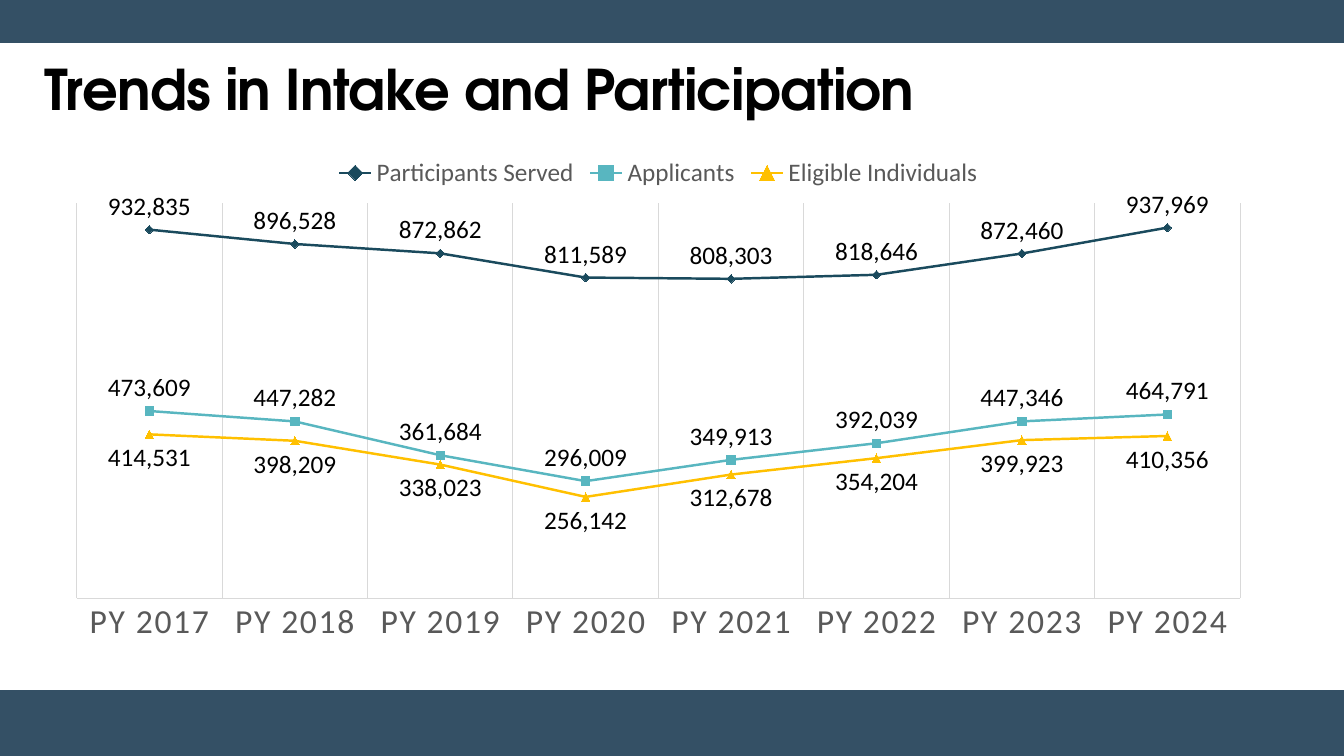
import pptx
import pptx.chart.data
import pptx.dml.color
import pptx.enum.chart
import pptx.enum.shapes
import pptx.enum.text
import pptx.oxml
import pptx.util

Inches = pptx.util.Inches
Pt = pptx.util.Pt
Enum = pptx.enum.chart
Place = Enum.XL_LABEL_POSITION
Mark = Enum.XL_MARKER_STYLE

BAR = "345065"
GRID = "D9D9D9"
GRAY = "595959"
BLACK = "000000"
YEARS = [f"PY {year}" for year in range(2017, 2025)]
TRENDS = [
    ("Participants Served", "1A4A5D", "276F8B", Mark.DIAMOND, Place.ABOVE,
     (932835, 896528, 872862, 811589, 808303, 818646, 872460, 937969)),
    ("Applicants", "58B6C0", "58B6C0", Mark.SQUARE, Place.ABOVE,
     (473609, 447282, 361684, 296009, 349913, 392039, 447346, 464791)),
    ("Eligible Individuals", "FFC000", "FFC000", Mark.TRIANGLE, Place.BELOW,
     (414531, 398209, 338023, 256142, 312678, 354204, 399923, 410356)),
]


def shade(color, code):
    color.rgb = pptx.dml.color.RGBColor.from_string(code)


def assign(item, **format):
    for key, value in format.items():
        setattr(item, key, value)


def style(font, size, code, name="Calibri", bold=False):
    assign(font, size=Pt(size), name=name, bold=bold)
    shade(font.color, code)


def fill(item, code):
    item.fill.solid()
    shade(item.fill.fore_color, code)


def stroke(line, code, width):
    shade(line.color, code)
    line.width = Pt(width)


def add_bar(slide, top, height):
    bar = slide.shapes.add_shape(
        pptx.enum.shapes.MSO_SHAPE.RECTANGLE,
        Inches(0), Inches(top), Inches(13.33), Inches(height))
    bar.shadow.inherit = False
    fill(bar, BAR)
    stroke(bar.line, BAR, 1)


def add_title(slide, text):
    title = slide.shapes.title
    assign(title, left=Inches(0.34), top=Inches(0),
           width=Inches(12.2), height=Inches(1.59))
    frame = title.text_frame
    assign(frame, word_wrap=True, margin_top=Inches(0.3),
           auto_size=pptx.enum.text.MSO_AUTO_SIZE.NONE,
           vertical_anchor=pptx.enum.text.MSO_ANCHOR.MIDDLE)
    line = frame.paragraphs[0]
    assign(line, alignment=pptx.enum.text.PP_ALIGN.LEFT, line_spacing=0.9)
    run = line.add_run()
    run.text = text
    style(run.font, 40, BLACK, "TeX Gyre Adventor", True)
    run._r.get_or_add_rPr().set("spc", "-50")


def set_plot(chart, **frame):
    area = chart._chartSpace.chart.plotArea
    for old in area.xpath("c:layout"):
        area.remove(old)
    parts = "".join(f'<c:{key} val="{value}"/>' for key, value in frame.items())
    area.insert(0, pptx.oxml.parse_xml(
        '<c:layout xmlns:c="http://schemas.openxmlformats.org/drawingml/2006/chart">'
        '<c:manualLayout><c:layoutTarget val="inner"/>'
        '<c:xMode val="edge"/><c:yMode val="edge"/>'
        f'{parts}</c:manualLayout></c:layout>'))


def set_axes(chart):
    years = chart.category_axis
    assign(years, has_major_gridlines=True,
           major_tick_mark=Enum.XL_TICK_MARK.NONE,
           minor_tick_mark=Enum.XL_TICK_MARK.NONE)
    style(years.tick_labels.font, 24, GRAY)
    for line in (years.format.line, years.major_gridlines.format.line):
        stroke(line, GRID, 0.75)
    for props in chart._chartSpace.xpath(".//c:catAx/c:txPr//a:defRPr"):
        props.set("spc", "120")
    assign(chart.value_axis, visible=False, has_major_gridlines=False,
           minimum_scale=0, maximum_scale=1000000)


def set_trend(trend, code, tint, mark, place):
    trend.smooth = False
    stroke(trend.format.line, code, 1.75)
    assign(trend.marker, style=mark, size=6)
    fill(trend.marker.format, tint)
    stroke(trend.marker.format.line, code, 0.75)
    labels = trend.data_labels
    assign(labels, show_value=True, position=place,
           number_format="#,##0", number_format_is_linked=False)
    style(labels.font, 18, BLACK)


def add_chart(slide):
    data = pptx.chart.data.CategoryChartData(number_format="#,##0")
    data.categories = YEARS
    for name, *_, values in TRENDS:
        data.add_series(name, values)
    chart = slide.shapes.add_chart(
        Enum.XL_CHART_TYPE.LINE_MARKERS, Inches(0.52), Inches(1.44),
        Inches(12.02), Inches(5.05), data).chart
    style(chart.font, 10, BLACK)
    assign(chart, has_title=False, has_legend=True)
    assign(chart.legend, position=Enum.XL_LEGEND_POSITION.TOP,
           include_in_layout=False)
    style(chart.legend.font, 18, GRAY)
    chart.plots[0].vary_by_categories = False
    set_axes(chart)
    set_plot(chart, x=0.02, y=0.114, w=0.96, h=0.776)
    for trend, (_, *format, _) in zip(chart.plots[0].series, TRENDS):
        set_trend(trend, *format)


def main():
    deck = pptx.Presentation()
    assign(deck, slide_width=Inches(13.33), slide_height=Inches(7.5))
    slide = deck.slides.add_slide(deck.slide_layouts[5])
    add_bar(slide, 6.85, 0.65)
    add_bar(slide, 0, 0.42)
    add_title(slide, "Trends in Intake and Participation")
    add_chart(slide)
    deck.save("out.pptx")


if __name__ == "__main__":
    main()
